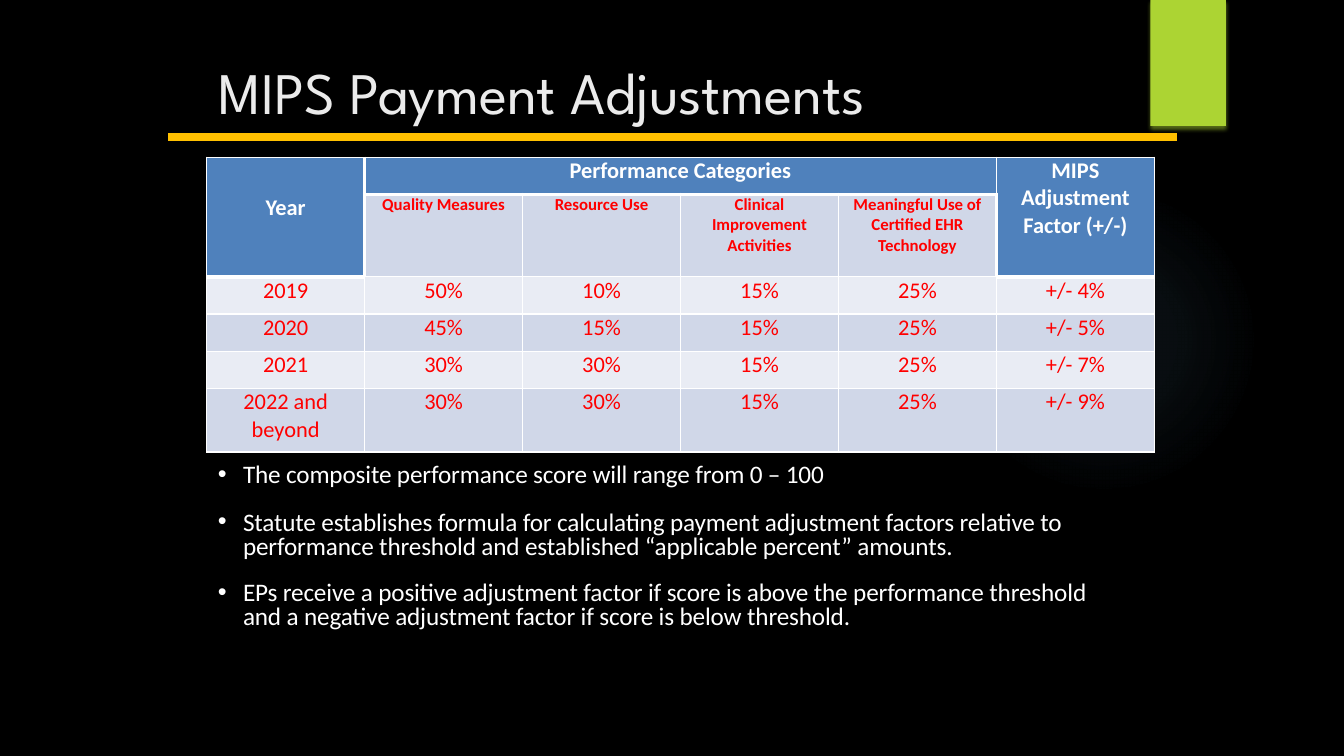
from pptx import Presentation
from pptx.dml.color import RGBColor
from pptx.enum.shapes import MSO_CONNECTOR, MSO_SHAPE
from pptx.enum.text import MSO_ANCHOR, MSO_AUTO_SIZE, PP_ALIGN
from pptx.oxml import parse_xml
from pptx.oxml.ns import nsdecls
from pptx.util import Inches, Pt

RECT, OVAL = MSO_SHAPE.RECTANGLE, MSO_SHAPE.OVAL
STRAIGHT = MSO_CONNECTOR.STRAIGHT
CENTER, LEFT, TOP = PP_ALIGN.CENTER, PP_ALIGN.LEFT, MSO_ANCHOR.TOP
NO_FIT = MSO_AUTO_SIZE.NONE
NS = nsdecls("a")
WHITE, RED, BLUE = "FFFFFF", "FF0000", "4F81BC"
BANDS = ["E9ECF4", "D0D7E8"]

CATEGORIES = ["Quality Measures", "Resource Use",
              "Clinical Improvement Activities",
              "Meaningful Use of Certified EHR Technology"]
ADJUSTMENTS = [
    ["2019", "50%", "10%", "15%", "25%", "+/- 4%"],
    ["2020", "45%", "15%", "15%", "25%", "+/- 5%"],
    ["2021", "30%", "30%", "15%", "25%", "+/- 7%"],
    ["2022 and\nbeyond", "30%", "30%", "15%", "25%", "+/- 9%"],
]
ROW_HEIGHTS = [0.37, 0.8, 0.37, 0.37, 0.37, 0.63]
# Text, line spacing, space before
POINTS = [
    ("The composite performance score will range from 0 – 100", 1.0, 0),
    ("Statute establishes formula for calculating payment adjustment factors "
     "relative to performance threshold and established “applicable percent” "
     "amounts.", 0.8, 16.3),
    ("EPs receive a positive adjustment factor if score is above the "
     "performance threshold and a negative adjustment factor if score is "
     "below threshold.", Pt(17.3), 16),
]


def rgb(color):
    return RGBColor.from_string(color)


def style_runs(p, font, size, color, bold=False, spacing=-10):
    for r in p.runs:
        r.font.name, r.font.size, r.font.bold = font, Pt(size), bold
        r.font.color.rgb = rgb(color)
        r._r.get_or_add_rPr().set("spc", str(spacing))


def place(sp, left, top, width, height):
    sp.left, sp.top = Inches(left), Inches(top)
    sp.width, sp.height = Inches(width), Inches(height)
    tf = sp.text_frame
    tf.margin_left = tf.margin_right = tf.margin_top = tf.margin_bottom = 0
    tf.vertical_anchor, tf.word_wrap, tf.auto_size = TOP, True, NO_FIT
    return tf


def add_plain_shape(s, kind, left, top, width, height):
    sp = s.shapes.add_shape(kind, Inches(left), Inches(top),
                            Inches(width), Inches(height))
    sp.shadow.inherit = False
    sp.line.fill.background()
    return sp


def add_decoration(s):
    # Faint round glow, behind everything
    glow = add_plain_shape(s, OVAL, 9.41, 1.83, 3.08, 3.08)
    stops = "".join(
        f'<a:gs pos="{pos}000"><a:srgbClr val="7AC4F0">'
        f'<a:alpha val="{alpha}000"/></a:srgbClr></a:gs>'
        for pos, alpha in [(0, 7), (36, 6), (69, 0), (100, 0)])
    glow._element.spPr.find("{*}prstGeom").addnext(parse_xml(
        f'<a:gradFill {NS}><a:gsLst>{stops}</a:gsLst><a:path path="circle">'
        '<a:fillToRect l="50000" t="50000" r="50000" b="50000"/></a:path>'
        '</a:gradFill>'))
    s.shapes._spTree.insert(2, glow._element)

    # Green tab
    tab = add_plain_shape(s, RECT, 11.41, 0, 0.75, 1.25)
    tab.fill.solid()
    tab.fill.fore_color.rgb = rgb("ACD433")
    tab._element.spPr.find("{*}effectLst").append(parse_xml(
        f'<a:outerShdw {NS} blurRad="{Pt(3.1)}" dist="{Pt(2)}" dir="5400000" '
        'rotWithShape="0"><a:srgbClr val="6A831F"><a:alpha val="83000"/>'
        '</a:srgbClr></a:outerShdw>'))

    # Rule under the title
    rule = s.shapes.add_connector(STRAIGHT, Inches(1.67), Inches(1.36),
                                  Inches(11.67), Inches(1.36))
    rule.line.color.rgb = rgb("FFC000")
    rule.line.width = Pt(6)
    rule._element.spPr.append(parse_xml(f"<a:effectLst {NS}/>"))


def fill_title(sp, left, top, width, height):
    tf = place(sp, left, top, width, height)
    tf.text = "MIPS Payment Adjustments"
    p = tf.paragraphs[0]
    p.alignment, p.line_spacing = LEFT, Pt(40.5)
    style_runs(p, "League Spartan", 42, "EBEBEB")


def fill_points(sp, left, top, width, height):
    tf = place(sp, left, top, width, height)
    tf.text = "\n".join(text for text, _, _ in POINTS)
    for p, (_, spacing, before) in zip(tf.paragraphs, POINTS):
        pPr = p._p.get_or_add_pPr()
        pPr.set("marL", str(Inches(0.27)))
        pPr.set("indent", str(Inches(-0.25)))
        pPr.append(parse_xml(f'<a:buChar {NS} char="•"/>'))
        p.line_spacing, p.space_before = spacing, Pt(before)
        style_runs(p, "Calibri", 18, WHITE)


def row_line(row, col):
    """Width of the line above the given row."""
    return 3 if row == (1 if 1 <= col <= 4 else 2) else 1


def column_line(row, col):
    """Width of the line left of the given column."""
    return 3 if (col == 1 and row < 2) or (col == 5 and row == 1) else 1


def add_borders(cell, row, col):
    widths = {"L": column_line(row, col),
              "R": column_line(row, col + cell.span_width),
              "T": row_line(row, col),
              "B": row_line(row + cell.span_height, col)}
    tcPr = cell._tc.get_or_add_tcPr()
    for side, width in widths.items():
        tcPr.append(parse_xml(
            f'<a:ln{side} {NS} w="{Pt(width)}"><a:solidFill>'
            f'<a:srgbClr val="{WHITE}"/></a:solidFill></a:ln{side}>'))


def add_adjustment_table(s, left, top, width):
    rows = [["Year", "Performance Categories", "", "", "",
             "MIPS\nAdjustment\nFactor (+/-)"],
            ["", *CATEGORIES, ""], *ADJUSTMENTS]
    table = s.shapes.add_table(len(rows), 6, Inches(left), Inches(top),
                               Inches(width), Inches(sum(ROW_HEIGHTS))).table
    table.first_row = table.horz_banding = False
    for row, height in zip(table.rows, ROW_HEIGHTS):
        row.height = Inches(height)

    # Merged headings
    for first, last in [((0, 0), (1, 0)), ((0, 1), (0, 4)), ((0, 5), (1, 5))]:
        table.cell(*first).merge(table.cell(*last))

    for i, row in enumerate(rows):
        for j, text in enumerate(row):
            cell = table.cell(i, j)
            heading = i == 0 or (i == 1 and j in (0, 5))
            cell.margin_top = cell.margin_bottom = 0
            cell.margin_left = cell.margin_right = Inches(0.12 if i == 1 else 0)
            add_borders(cell, i, j)
            cell.fill.solid()
            cell.fill.fore_color.rgb = rgb(BLUE if heading else BANDS[i % 2])
            if not text:
                continue
            cell.text_frame.text = text
            for p in cell.text_frame.paragraphs:
                p.alignment = CENTER
                style_runs(p, "Calibri", 12 if i == 1 else 16,
                           WHITE if heading else RED, bold=i < 2, spacing=0)
    table.cell(0, 0).margin_top = Inches(0.37)


def main():
    prs = Presentation()
    prs.slide_width, prs.slide_height = Inches(13.33), Inches(7.5)
    s = prs.slides.add_slide(prs.slide_layouts[1])
    s.background.fill.solid()
    s.background.fill.fore_color.rgb = rgb("000000")
    add_decoration(s)
    fill_title(s.shapes.title, 2.17, 0.69, 9, 0.58)
    fill_points(s.placeholders[1], 2.14, 4.55, 8.79, 1.75)
    add_adjustment_table(s, 2.05, 1.56, 9.4)
    prs.save("out.pptx")


if __name__ == "__main__":
    main()
